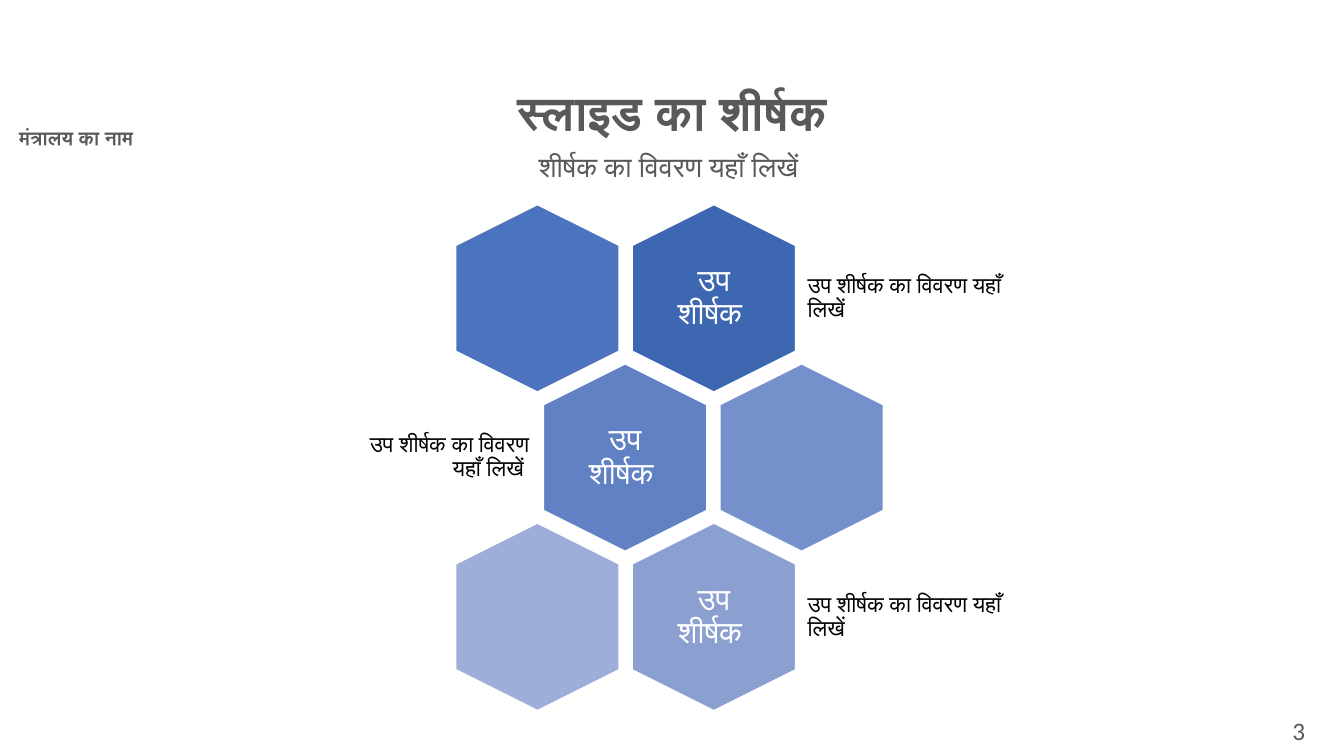
from pptx import Presentation
from pptx import util as u
from pptx.dml.color import RGBColor
from pptx.enum import shapes, text

ALIGN = text.PP_ALIGN
ANCHOR = text.MSO_ANCHOR
GREY = "595959"
HEX_LENGTH, HEX_WIDTH = 1.86, 1.62
COLUMN_STEP, ROW_STEP, ROW_SHIFT = 1.75, 1.58, 0.87
DESCRIPTION = "उप शीर्षक का विवरण यहाँ लिखें"

# row, column, fill, side of the description (None leaves the hexagon empty)
HEXAGONS = [
    (0, 1, "3E67B2", "right"),
    (0, 0, "4C73BF", None),
    (1, 0, "6181C5", "left"),
    (1, 1, "7690CB", None),
    (2, 1, "8B9FD1", "right"),
    (2, 0, "9FAED8", None),
]


def colour(value):
    return RGBColor.from_string(value)


def place(shape, left, top, width, height):
    shape.left, shape.top = u.Inches(left), u.Inches(top)
    shape.width, shape.height = u.Inches(width), u.Inches(height)


def write(shape, words, size, ink, align=ALIGN.CENTER, font="Calibri",
          bold=False, anchor=ANCHOR.TOP, inset=None, spacing=0.9):
    """Fill the shape's text frame with one formatted paragraph."""
    frame = shape.text_frame
    frame.word_wrap = True
    frame.auto_size = text.MSO_AUTO_SIZE.NONE
    frame.vertical_anchor = anchor
    if inset is not None:
        frame.margin_left = frame.margin_right = u.Inches(inset)
        frame.margin_top = frame.margin_bottom = u.Inches(inset)
    paragraph = frame.paragraphs[0]
    paragraph.alignment = align
    paragraph.line_spacing = spacing
    paragraph.space_before = u.Pt(0)
    run = paragraph.add_run()
    run.text = words
    run.font.name = font
    run.font.size = u.Pt(size)
    run.font.bold = bold
    run.font.color.rgb = colour(ink)


def add_text(slide, box, words, size, ink, **style):
    shape = slide.shapes.add_textbox(*[u.Inches(length) for length in box])
    write(shape, words, size, ink, **style)


def add_heading(slide, left, top, width):
    title, subtitle = slide.placeholders
    place(title, left, top, width, 0.55)
    write(title, "स्लाइड का शीर्षक", 34, GREY, bold=True)
    place(subtitle, left, top + 0.63, width, 0.63)
    write(subtitle, "शीर्षक का विवरण यहाँ लिखें ", 20, GREY)


def add_hexagon(slide, left, top, fill, side):
    """Draw a hexagon standing on its point, with its label and description."""
    hexagon = slide.shapes.add_shape(
        shapes.MSO_SHAPE.HEXAGON, u.Inches(left), u.Inches(top),
        u.Inches(HEX_LENGTH), u.Inches(HEX_WIDTH))
    hexagon.rotation = 90
    hexagon.shadow.inherit = False
    hexagon.fill.solid()
    hexagon.fill.fore_color.rgb = colour(fill)
    hexagon.line.color.rgb = colour("FFFFFF")
    hexagon.line.width = u.Pt(1)
    if side is None:
        return
    add_text(slide, (left + 0.37, top + 0.17, 1.12, 1.28), "उप शीर्षक ", 22, "FFFFFF",
             anchor=ANCHOR.MIDDLE, inset=0.09)
    if side == "right":
        offset, width, words, align = 1.79, 2.08, DESCRIPTION, ALIGN.LEFT
    else:
        offset, width, words, align = -1.96, 2.01, DESCRIPTION + " ", ALIGN.RIGHT
    add_text(slide, (left + offset, top + 0.25, width, 1.12), words, 16, "000000",
             align=align, anchor=ANCHOR.MIDDLE, inset=0.07)


def add_honeycomb(slide, left, top):
    for row, column, fill, side in HEXAGONS:
        shift = ROW_SHIFT if row % 2 else 0
        add_hexagon(slide, left + column * COLUMN_STEP + shift,
                    top + row * ROW_STEP, fill, side)


def main():
    presentation = Presentation()
    presentation.slide_width = u.Inches(13.33)
    presentation.slide_height = u.Inches(7.5)
    slide = presentation.slides.add_slide(presentation.slide_layouts[0])
    add_text(slide, (-0.11, 1.23, 1.73, 0.35), "मंत्रालय का नाम", 14, GREY,
             font="Roboto", bold=True)
    add_honeycomb(slide, 4.4, 2.15)
    add_heading(slide, 1.86, 0.84, 9.61)
    add_text(slide, (12.42, 7.05, 0.92, 0.45), "3", 18, GREY, spacing=1.0)
    presentation.save("out.pptx")


if __name__ == "__main__":
    main()
